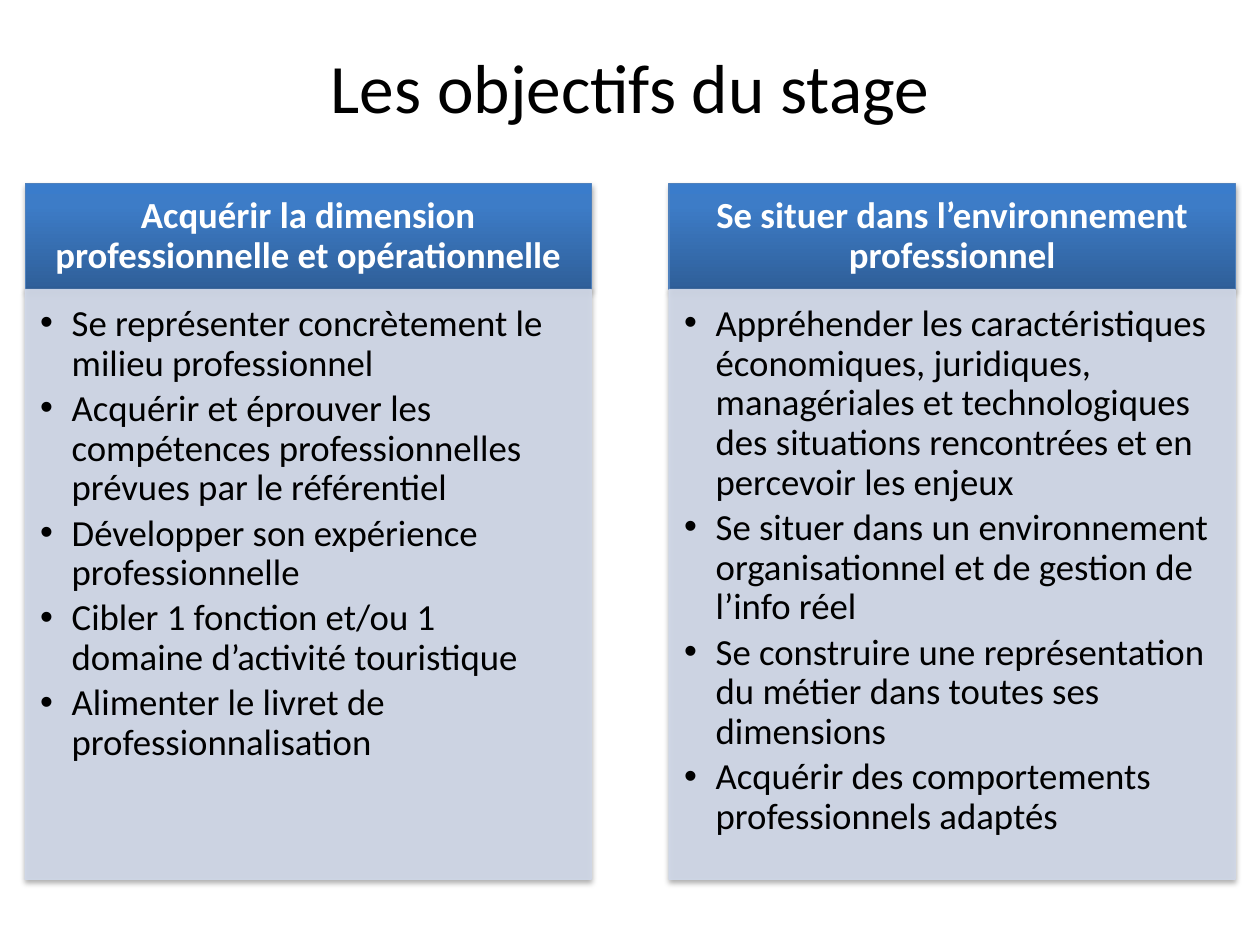
from lxml import etree
from pptx import Presentation
from pptx.dml.color import RGBColor
from pptx.enum import shapes, text
from pptx.oxml import parse_xml
from pptx.util import Pt

NAMESPACE = 'xmlns:a="http://schemas.openxmlformats.org/drawingml/2006/main"'
BLACK, WHITE = "000000", "FFFFFF"
HEADER_STOPS = [(0, "2F5F99"), (80000, "3D7CC7"), (100000, "3A7CCB")]
GRADIENT = (
    f'<a:gradFill {NAMESPACE} rotWithShape="1"><a:gsLst>'
    + "".join(f'<a:gs pos="{position}"><a:srgbClr val="{color}"/></a:gs>'
              for position, color in HEADER_STOPS)
    + '</a:gsLst><a:lin ang="16200000" scaled="0"/></a:gradFill>'
)
SHADOW = (
    f'<a:effectLst {NAMESPACE}><a:outerShdw blurRad="{Pt(3.1)}" dist="{Pt(1.8)}" '
    'dir="5400000" rotWithShape="0"><a:srgbClr val="000000">'
    '<a:alpha val="35000"/></a:srgbClr></a:outerShdw></a:effectLst>'
)
ALPHA = f'<a:alpha {NAMESPACE} val="90000"/>'
BULLETS = [f'<a:buFont {NAMESPACE} typeface="Arial"/>', f'<a:buChar {NAMESPACE} char="•"/>']

TITLE = "Les objectifs du stage"
COLUMNS = [
    ("Acquérir la dimension professionnelle et opérationnelle", [
        "Se représenter concrètement le milieu professionnel",
        "Acquérir et éprouver les compétences professionnelles prévues par le référentiel",
        "Développer son expérience professionnelle",
        "Cibler 1 fonction et/ou 1 domaine d’activité touristique",
        "Alimenter le livret de professionnalisation",
    ]),
    ("Se situer dans l’environnement professionnel", [
        "Appréhender les caractéristiques économiques, juridiques, managériales et "
        "technologiques des situations rencontrées et en percevoir les enjeux",
        "Se situer dans un environnement organisationnel et de gestion de l’info réel",
        "Se construire une représentation du métier dans toutes ses dimensions",
        "Acquérir des comportements professionnels adaptés",
    ]),
]
MARGIN, COLUMN_WIDTH, COLUMN_STEP = 14.4, 323.5, 368
HEADER_TOP, HEADER_HEIGHT, BODY_HEIGHT = 105, 60.5, 337


def rgb(value):
    return RGBColor.from_string(value)


def write(shape, lines, frame_format, paragraph_format, font_format):
    """Fill the shape with one paragraph per line, formatted from the dicts."""
    frame = shape.text_frame
    frame.text = "\n".join(lines)
    for name, value in {"word_wrap": True, **frame_format}.items():
        setattr(frame, name, value)
    for paragraph in frame.paragraphs:
        for name, value in paragraph_format.items():
            setattr(paragraph, name, value)
        font = paragraph.runs[0].font
        for name, value in {"name": "Calibri", **font_format}.items():
            if name == "color":
                font.color.rgb = rgb(value)
            else:
                setattr(font, name, value)


presentation = Presentation()
presentation.slide_width, presentation.slide_height = Pt(720), Pt(540)
slide = presentation.slides.add_slide(presentation.slide_layouts[6])

title = slide.shapes.add_textbox(Pt(36), Pt(21.6), Pt(648), Pt(55.4))
write(title, [TITLE], {"vertical_anchor": text.MSO_ANCHOR.MIDDLE},
      {"alignment": text.PP_ALIGN.CENTER}, {"size": Pt(39.6), "color": BLACK})

header_frame = {
    "vertical_anchor": text.MSO_ANCHOR.MIDDLE,
    "margin_left": Pt(11.5), "margin_right": Pt(11.5),
    "margin_top": Pt(6.5), "margin_bottom": Pt(6.5),
}
body_frame = {
    "vertical_anchor": text.MSO_ANCHOR.TOP,
    "margin_left": Pt(8.6), "margin_right": Pt(11.5),
    "margin_top": Pt(8.6), "margin_bottom": Pt(13),
}

for index, (heading, objectives) in enumerate(COLUMNS):
    left = MARGIN + index * COLUMN_STEP
    header = slide.shapes.add_shape(
        shapes.MSO_SHAPE.RECTANGLE, Pt(left), Pt(HEADER_TOP),
        Pt(COLUMN_WIDTH), Pt(HEADER_HEIGHT))
    body = slide.shapes.add_shape(
        shapes.MSO_SHAPE.RECTANGLE, Pt(left), Pt(HEADER_TOP + HEADER_HEIGHT),
        Pt(COLUMN_WIDTH), Pt(BODY_HEIGHT))

    for shape, color in ((header, "4F81BD"), (body, "D0D8E8")):
        shape.fill.solid()
        shape.fill.fore_color.rgb = rgb(color)
        shape.line.color.rgb = rgb(color)
        shape.line.width = Pt(0.75)
        shape.element.spPr.append(parse_xml(SHADOW))

    solid_fill = header.element.spPr.find("{*}solidFill")
    header.element.spPr.replace(solid_fill, parse_xml(GRADIENT))
    for color_element in body.element.spPr.findall(".//{*}solidFill/{*}srgbClr"):
        color_element.append(etree.fromstring(ALPHA))

    write(header, [heading], header_frame,
          {"alignment": text.PP_ALIGN.CENTER, "line_spacing": 0.9},
          {"size": Pt(21), "bold": True, "color": WHITE})
    write(body, objectives, body_frame,
          {"alignment": text.PP_ALIGN.LEFT, "line_spacing": 0.9, "space_after": Pt(3.2)},
          {"size": Pt(21), "color": BLACK})
    for paragraph in body.text_frame.paragraphs:
        properties = paragraph._p.get_or_add_pPr()
        properties.set("marL", str(Pt(18)))
        properties.set("indent", str(Pt(-18)))
        properties.extend(parse_xml(bullet) for bullet in BULLETS)

presentation.save("out.pptx")
